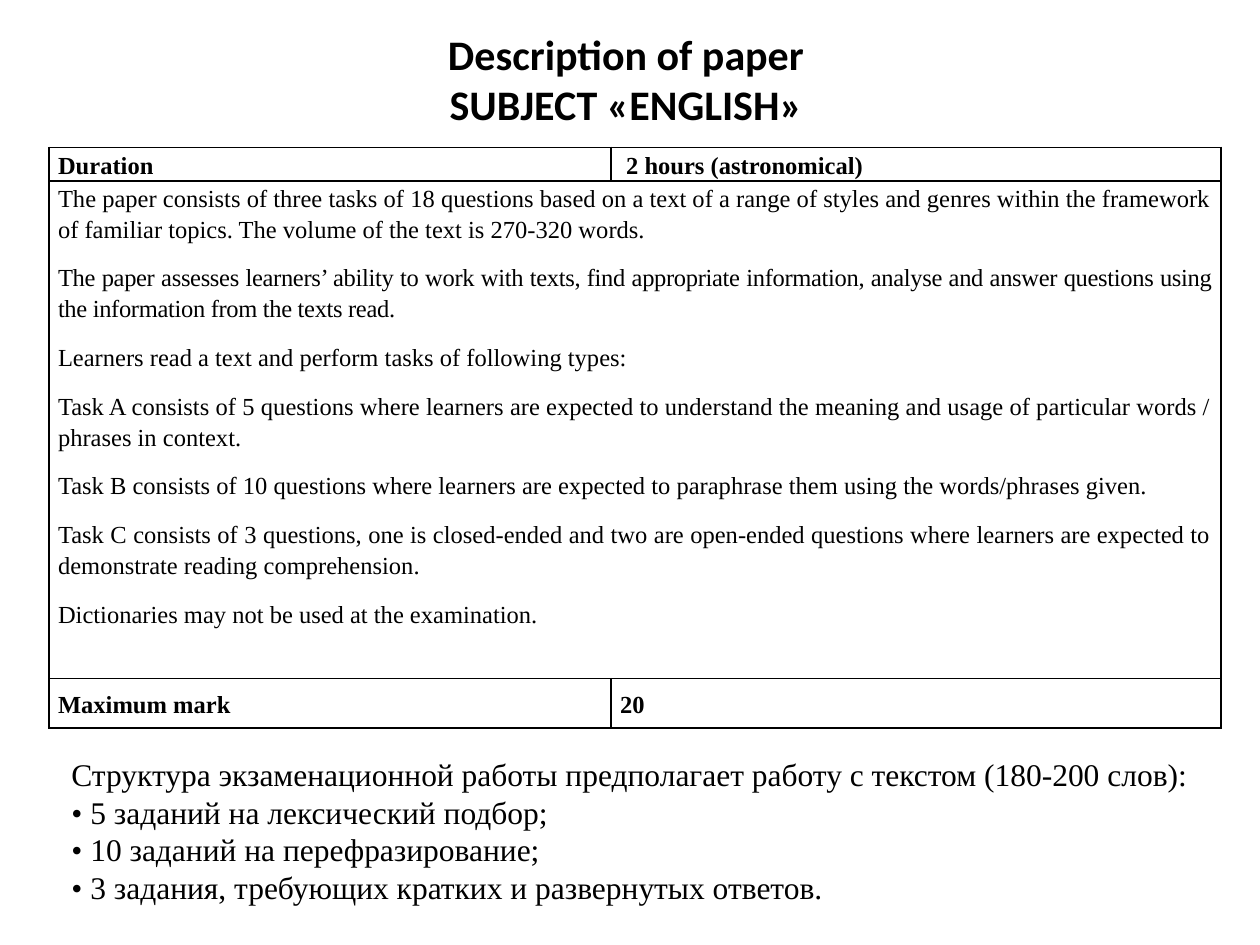
from dataclasses import dataclass

from lxml.etree import SubElement
from pptx import Presentation
from pptx.dml.color import RGBColor as RGB
from pptx.enum.text import MSO_ANCHOR as ANCHOR, PP_ALIGN as ALIGN
from pptx.oxml.ns import qn
from pptx.util import Cm, Pt


@dataclass(frozen=True)
class Theme:
    ink: str = "000000"
    heading: str = "Calibri"
    body: str = "Times New Roman"
    title_size: int = 24
    table_size: int = 14
    note_size: int = 18
    border: int = 1


THEME = Theme()
TITLE = "Description of paper\nSUBJECT «ENGLISH»"
DURATION = ("Duration", " 2 hours (astronomical)")
DETAILS = [
    "The paper consists of three tasks of 18 questions based on a text of a range of styles "
    "and genres within the framework of familiar topics. The volume of the text is 270-320 words.",
    "The paper assesses learners’ ability to work with texts, find appropriate information, "
    "analyse and answer questions using the information from the texts read.",
    "Learners read a text and perform tasks of following types:",
    "Task A consists of 5 questions where learners are expected to understand the meaning "
    "and usage of particular words / phrases in context.",
    "Task B consists of 10 questions where learners are expected to paraphrase them using "
    "the words/phrases given.",
    "Task C consists of 3 questions, one is closed-ended and two are open-ended questions "
    "where learners are expected to demonstrate reading comprehension.",
    "Dictionaries may not be used at the examination.",
]
CONDENSED = DETAILS[1]
MARK = ("Maximum mark", "20")
NOTES = [
    "Структура экзаменационной работы предполагает работу с текстом (180-200 слов):",
    "• 5 заданий на лексический подбор;",
    "• 10 заданий на перефразирование;",
    "• 3 задания, требующих кратких и развернутых ответов.",
]

TITLE_BOX = (1.19, 0, 22.86, 3.18)
TABLE_BOX = (0.99, 2.97, 23.62, 11.51)
NOTES_BOX = (1.19, 15.09, 23.42, 3.33)
COL_WIDTHS = (11.33, 12.29)
ROW_HEIGHTS = (0.48, 10.03, 0.99)


def write(tf, texts, font, size, bold=False, align=ALIGN.LEFT):
    for i, text in enumerate(texts):
        p = tf.paragraphs[0] if i == 0 else tf.add_paragraph()
        p.text = text
        p.alignment = align
        p.font.name = font
        p.font.size = Pt(size)
        p.font.bold = bold
        p.font.color.rgb = RGB.from_string(THEME.ink)


def add_text(s, box, texts, *style, anchor=ANCHOR.TOP, **options):
    tf = s.shapes.add_textbox(*map(Cm, box)).text_frame
    tf.word_wrap = True
    tf.vertical_anchor = anchor
    write(tf, texts, *style, **options)


def style_cell(cell):
    tc_pr = cell._tc.get_or_add_tcPr()
    for side in ("a:lnL", "a:lnR", "a:lnT", "a:lnB"):
        ln = SubElement(tc_pr, qn(side), w=str(Pt(THEME.border)))
        fill = SubElement(ln, qn("a:solidFill"))
        SubElement(fill, qn("a:srgbClr"), val=THEME.ink)
    cell.fill.background()
    cell.margin_left = cell.margin_right = Cm(0.18)
    cell.margin_top = cell.margin_bottom = 0


def fill_cell(cell, texts, anchor=ANCHOR.MIDDLE, **options):
    cell.vertical_anchor = anchor
    write(cell.text_frame, texts, THEME.body, THEME.table_size, **options)
    for p in cell.text_frame.paragraphs:
        p.line_spacing = 1.15
        p.space_after = Pt(10)


def add_paper_table(s):
    shape = s.shapes.add_table(len(ROW_HEIGHTS), len(COL_WIDTHS), *map(Cm, TABLE_BOX))
    table = shape.table
    table.first_row = table.horz_banding = False
    for column, width in zip(table.columns, COL_WIDTHS):
        column.width = Cm(width)
    for row, height in zip(table.rows, ROW_HEIGHTS):
        row.height = Cm(height)
    for cell in table.iter_cells():
        style_cell(cell)

    for row, texts in ((0, DURATION), (2, MARK)):
        for col, text in enumerate(texts):
            fill_cell(table.cell(row, col), [text], bold=True)

    details = table.cell(1, 0)
    details.merge(table.cell(1, 1))
    fill_cell(details, DETAILS, anchor=ANCHOR.TOP, align=ALIGN.JUSTIFY)
    paragraphs = details.text_frame.paragraphs
    paragraphs[0].space_before = Pt(12)
    r = paragraphs[DETAILS.index(CONDENSED)].runs[0]
    r._r.get_or_add_rPr().set("spc", "-20")


def main():
    prs = Presentation()
    prs.slide_width, prs.slide_height = Cm(25.4), Cm(19.05)
    s = prs.slides.add_slide(prs.slide_layouts[6])
    add_text(s, TITLE_BOX, [TITLE], THEME.heading, THEME.title_size,
             anchor=ANCHOR.MIDDLE, bold=True, align=ALIGN.CENTER)
    add_paper_table(s)
    add_text(s, NOTES_BOX, NOTES, THEME.body, THEME.note_size)
    prs.save("out.pptx")


if __name__ == "__main__":
    main()
